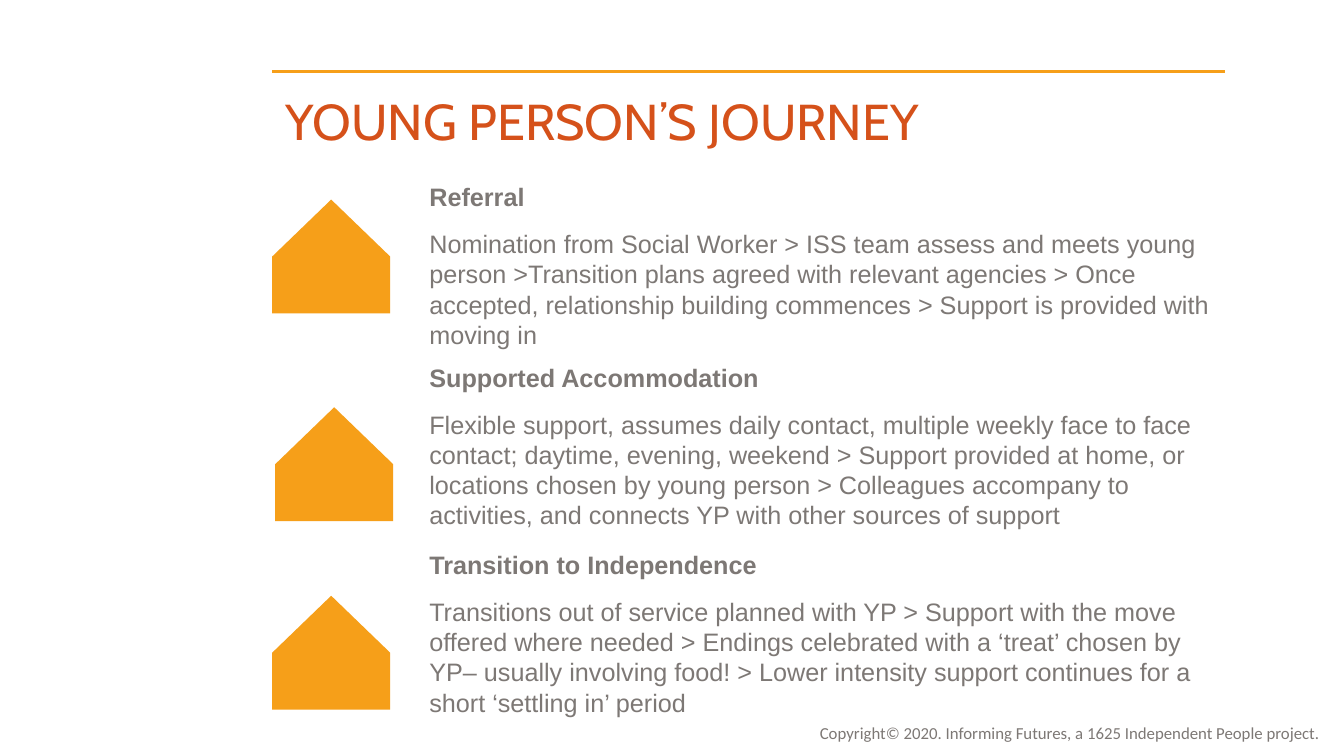
"""Builds the young person's journey slide with three support stages."""
from lxml.etree import SubElement
from pptx import Presentation
from pptx.dml.color import RGBColor
from pptx.enum.shapes import MSO_CONNECTOR, MSO_SHAPE
from pptx.enum.text import MSO_AUTO_SIZE, PP_ALIGN
from pptx.oxml.ns import qn
from pptx.util import Inches, Pt

ORANGE = RGBColor(0xF6, 0x9F, 0x19)
RUST = RGBColor(0xD5, 0x51, 0x1A)
GREY = RGBColor(0x7D, 0x78, 0x75)

TITLE = "YOUNG PERSON’S JOURNEY"
COPYRIGHT = "Copyright© 2020. Informing Futures, a 1625 Independent People project."
STAGES = [
    {"heading": "Referral",
     "detail": "Nomination from Social Worker > ISS team assess and meets young person "
               ">Transition plans agreed with relevant agencies > Once accepted, relationship "
               "building commences > Support is provided with moving in",
     "text_top": 1.75, "text_width": 7.99, "house": (2.72, 1.96)},
    {"heading": "Supported Accommodation",
     "detail": "Flexible support, assumes daily contact, multiple weekly face to face contact; "
               "daytime, evening, weekend > Support provided at home, or locations chosen by "
               "young person > Colleagues accompany to activities, and connects YP with other "
               "sources of support",
     "text_top": 3.54, "text_width": 7.99, "house": (2.75, 4.02)},
    {"heading": "Transition to Independence",
     "detail": "Transitions out of service planned with YP > Support with the move offered where "
               "needed > Endings celebrated with a ‘treat’ chosen by YP– usually involving food! "
               "> Lower intensity support continues for a short ‘settling in’ period",
     "text_top": 5.4, "text_width": 8.06, "house": (2.72, 5.89)},
]
TEXT_LEFT, TEXT_HEIGHT = 4.16, 1.78
HOUSE_SIZE = (1.13, 1.17)


def add_text(page, bounds, lines, font_name, size, color):
    """Add a wrapped text box and return its paragraphs."""
    box = page.shapes.add_textbox(*map(Inches, bounds))
    frame = box.text_frame
    frame.word_wrap = True
    frame.auto_size = MSO_AUTO_SIZE.SHAPE_TO_FIT_TEXT
    frame.text = "\n".join(lines)
    for para in frame.paragraphs:
        para.font.name = font_name
        para.font.size = Pt(size)
        para.font.color.rgb = color
    return frame.paragraphs


def add_rule(page):
    """Add the line above the title."""
    rule = page.shapes.add_connector(
        MSO_CONNECTOR.STRAIGHT, Inches(2.7), Inches(0.71), Inches(12.15), Inches(0.71))
    rule.line.color.rgb = ORANGE
    rule.line.width = Pt(2.25)
    SubElement(rule.line._get_or_add_ln().getparent(), qn("a:effectLst"))


def add_stage(page, stage):
    """Add one stage's text and its house."""
    bounds = (TEXT_LEFT, stage["text_top"], stage["text_width"], TEXT_HEIGHT)
    paras = add_text(page, bounds, [stage["heading"], stage["detail"]], "Arial", 18, GREY)
    for para in paras:
        para.space_after = Pt(12)
    paras[0].font.bold = True

    house = page.shapes.add_shape(
        MSO_SHAPE.PENTAGON, *map(Inches, stage["house"] + HOUSE_SIZE))
    house.rotation = 270
    house.shadow.inherit = False
    house.fill.solid()
    house.fill.fore_color.rgb = ORANGE
    house.line.fill.background()


def main():
    """Build and save the deck."""
    deck = Presentation()
    deck.slide_width, deck.slide_height = Inches(13.33), Inches(7.5)
    page = deck.slides.add_slide(deck.slide_layouts[6])
    credit = add_text(page, (6.94, 7.12, 6.25, 0.3), [COPYRIGHT], "Calibri", 12, GREY)
    credit[0].alignment = PP_ALIGN.RIGHT
    add_rule(page)
    add_text(page, (2.73, 0.84, 8.81, 0.71), [TITLE], "Cabin", 36, RUST)
    for stage in STAGES:
        add_stage(page, stage)
    deck.save("out.pptx")


if __name__ == "__main__":
    main()
